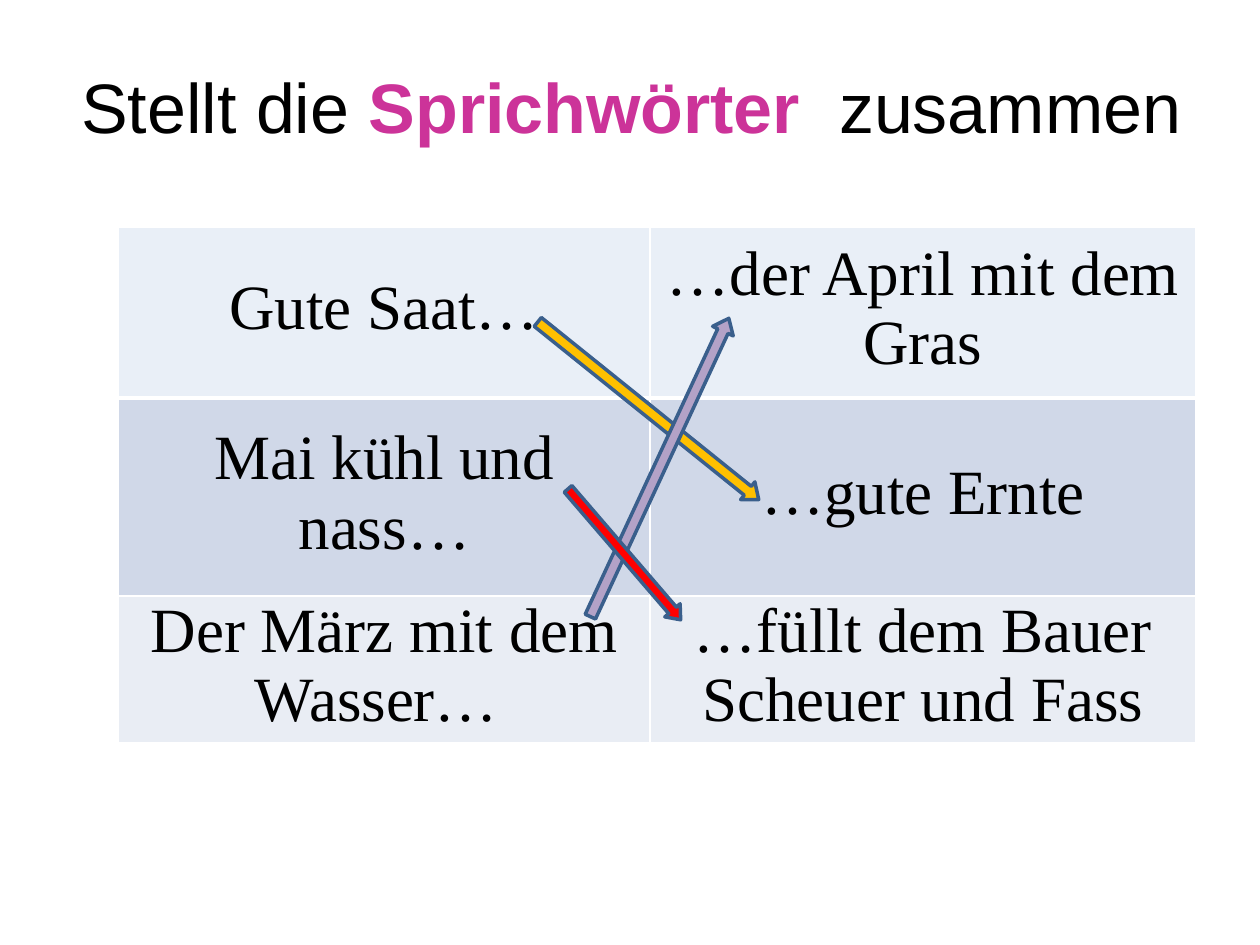
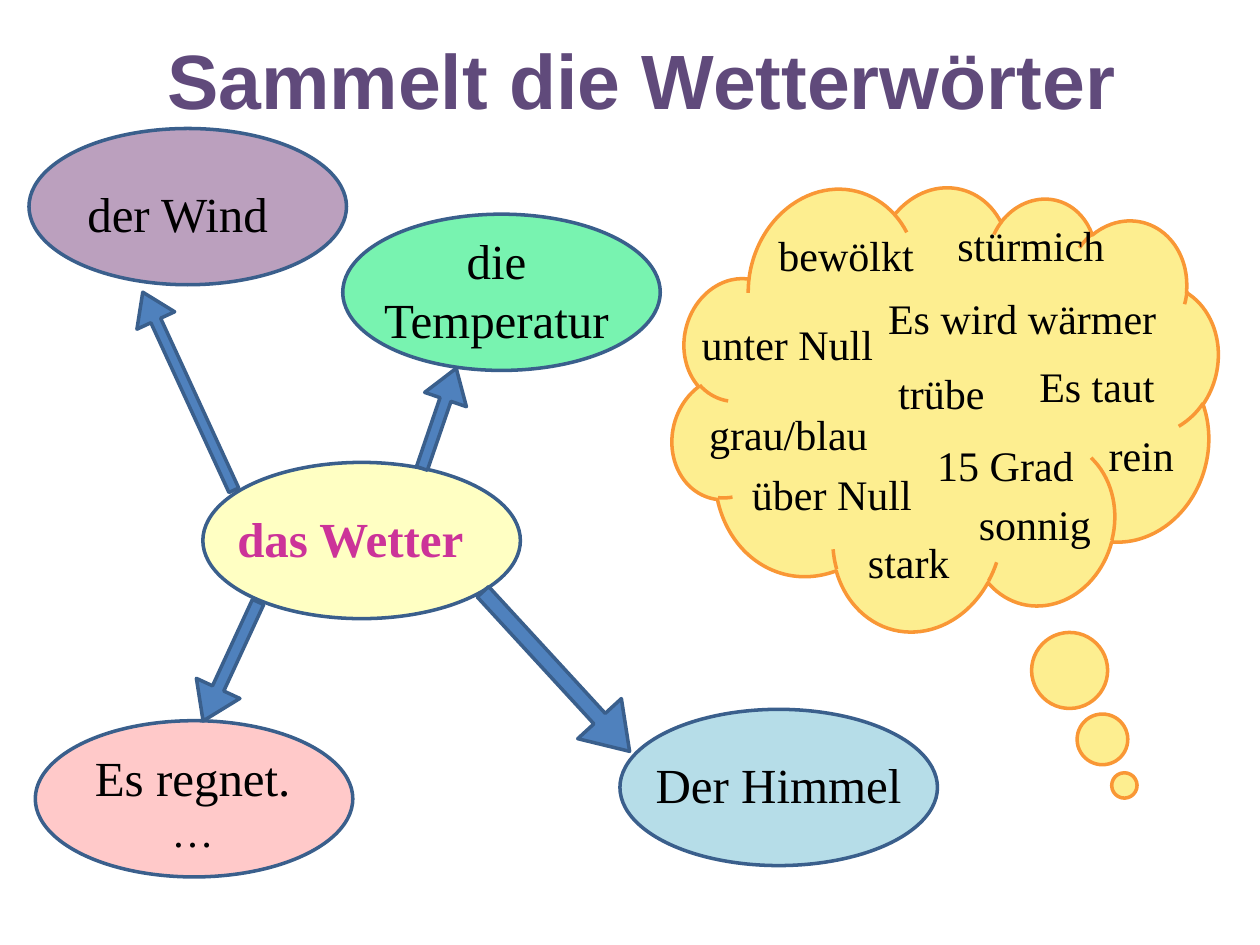
from lxml import etree
from pptx import Presentation
from pptx.dml.color import RGBColor
from pptx.enum import shapes, text
from pptx.oxml.ns import qn
from pptx.util import Inches, Pt

SANS, SERIF = "Arial", "Times New Roman"
BLACK, WHITE, PINK, PURPLE = "000000", "FFFFFF", "CC3399", "604A7B"
OUTLINE, ARROW_BLUE, CLOUD_LINE = "3A5F8C", "4F81BD", "F99735"

# Slide 1
PROVERB_TITLE = [("Stellt die ", {}),
                 ("Sprichwörter", {"color": PINK, "bold": True}),
                 ("  zusammen", {})]
PROVERBS = [("Gute Saat…", "…der April mit dem Gras"),
            ("Mai kühl und nass…", "…gute Ernte"),
            ("Der März mit dem Wasser… ", "…füllt dem Bauer Scheuer und Fass")]
TABLE_PLACE = (0.94, 1.8)
COLUMN_WIDTHS = (4.22, 4.33)
ROW_HEIGHTS = (1.36, 1.57, 1.16)
ROW_FILLS = ("E9EFF7", "D0D8E8", "E9EDF4")
# box, rotation, fill, head length
MATCH_ARROWS = [((4.02, 3.17, 2.25, 0.18), 38.8, "FFC000"),
                ((3.93, 3.62, 2.61, 0.18), 294.9, "B3A2C7"),
                ((4.27, 4.32, 1.37, 0.16), 49.3, "FF0000")]

# Slide 2
WEATHER_TITLE = "Sammelt die Wetterwörter"
CLOUD_BOX = (5.36, 1.41, 4.26, 3.62)
# word, left, top, width
CLOUD_WORDS = [("bewölkt", 6.08, 1.77, 1.73), ("unter Null", 5.47, 2.48, 1.88),
               ("grau/blau", 5.53, 3.19, 1.57), ("stürmich", 7.5, 1.69, 1.69),
               ("über Null", 5.87, 3.67, 1.66), ("rein", 8.7, 3.36, 1.1),
               ("trübe", 7.03, 2.87, 1.1), ("stark", 6.79, 4.21, 0.94),
               ("Es wird wärmer", 6.95, 2.27, 2.54), ("Es taut", 8.15, 2.81, 1.34),
               ("15 Grad", 7.34, 3.44, 1.3), ("sonnig", 7.67, 3.91, 1.27)]
ELLIPSE_SIZE = (2.52, 1.24)
# ellipse corner, fill, opacity in percent, label box, label paragraphs
TOPICS = [
    ((0.23, 1.02), "7B4581", 51, (0.31, 1.41, 2.2, 0.57), [[("der Wind", {})]]),
    ((1.61, 3.67), "FFFF99", 59, (1.77, 3.99, 2.02, 0.57),
     [[("das Wetter", {"color": PINK, "bold": True})]]),
    ((4.92, 5.63), "93CDDD", 67, (5.08, 5.94, 2.2, 0.57), [[("Der Himmel", {})]]),
    ((2.72, 1.7), "00EA6A", 53, (2.8, 1.78, 2.28, 1.04), [[("die Temperatur", {})]]),
    ((0.28, 5.72), "FF9999", 52, (0.43, 5.88, 2.2, 0.98),
     [[("Es regnet.", {})], [("…", {"size": 24})]]),
]
TOPIC_ARROWS = [((1.33, 2.24, 0.33, 1.73), 335.3), ((1.64, 4.73, 0.38, 1.04), 204.8),
                ((3.31, 2.9, 0.35, 0.84), 18.9), ((4.18, 4.47, 0.47, 1.72), 137.4)]


def rgb(color):
    return RGBColor.from_string(color)


def inches(values):
    return [Inches(value) for value in values]


def write(frame, paragraphs, name, size, color=BLACK, bold=False, centred=True):
    """Fill a text frame; each paragraph is a list of (text, changed formats)."""
    base = {"name": name, "size": size, "color": color, "bold": bold}
    for index, runs in enumerate(paragraphs):
        paragraph = frame.add_paragraph() if index else frame.paragraphs[0]
        paragraph.alignment = text.PP_ALIGN.CENTER if centred else text.PP_ALIGN.LEFT
        for words, changes in runs:
            run = paragraph.add_run()
            run.text = words
            style = {**base, **changes}
            run.font.color.rgb = rgb(style.pop("color"))
            style["size"] = Pt(style["size"])
            for key, value in style.items():
                setattr(run.font, key, value)


def add_text(parent, box, paragraphs, name, size, grow=True,
             anchor=text.MSO_ANCHOR.TOP, **formats):
    frame = parent.add_textbox(*inches(box)).text_frame
    frame.word_wrap = True
    frame.auto_size = (text.MSO_AUTO_SIZE.SHAPE_TO_FIT_TEXT if grow
                       else text.MSO_AUTO_SIZE.NONE)
    frame.vertical_anchor = anchor
    write(frame, paragraphs, name, size, **formats)


def add_outlined(parent, kind, box, fill, line=OUTLINE, opacity=100,
                 rotation=0, adjustments=()):
    shape = parent.add_shape(kind, *inches(box))
    shape.shadow.inherit = False
    shape.rotation = rotation
    for index, value in enumerate(adjustments):
        shape.adjustments[index] = value
    shape.fill.solid()
    shape.fill.fore_color.rgb = rgb(fill)
    if opacity < 100:
        color = shape.element.spPr.find(qn("a:solidFill")).find(qn("a:srgbClr"))
        etree.SubElement(color, qn("a:alpha")).set("val", str(opacity * 1000))
    shape.line.color.rgb = rgb(line)
    shape.line.width = Pt(2)


def set_borders(cell, **widths):
    """Give a cell white borders, in points, keyed L, R, T and B."""
    properties = cell._tc.get_or_add_tcPr()
    for side in "LRTB":
        border = etree.SubElement(properties, qn(f"a:ln{side}"),
                                  w=str(Pt(widths.get(side, 1))))
        solid = etree.SubElement(border, qn("a:solidFill"))
        etree.SubElement(solid, qn("a:srgbClr"), val=WHITE)


def add_proverb_table(slide):
    size = (sum(COLUMN_WIDTHS), sum(ROW_HEIGHTS))
    table = slide.shapes.add_table(len(PROVERBS), len(COLUMN_WIDTHS),
                                   *inches(TABLE_PLACE + size)).table
    table.first_row = table.horz_banding = False
    for column, width in zip(table.columns, COLUMN_WIDTHS):
        column.width = Inches(width)
    for row, height in zip(table.rows, ROW_HEIGHTS):
        row.height = Inches(height)
    heavy_lines = ({"B": 3}, {"T": 3}, {})
    margins = {"margin_left": 0.13, "margin_right": 0.13,
               "margin_top": 0, "margin_bottom": 0.06}
    for row, halves in enumerate(PROVERBS):
        for column, half in enumerate(halves):
            cell = table.cell(row, column)
            set_borders(cell, **heavy_lines[row])
            cell.fill.solid()
            cell.fill.fore_color.rgb = rgb(ROW_FILLS[row])
            cell.vertical_anchor = text.MSO_ANCHOR.MIDDLE
            for key, value in margins.items():
                setattr(cell, key, Inches(value))
            write(cell.text_frame, [[(half, {})]], SERIF, 36)


def build_proverbs(slide):
    add_text(slide.shapes, (0.51, 0.21, 9, 1.25), [PROVERB_TITLE], SANS, 40,
             grow=False, anchor=text.MSO_ANCHOR.MIDDLE)
    add_proverb_table(slide)
    for box, rotation, fill in MATCH_ARROWS:
        add_outlined(slide.shapes, shapes.MSO_SHAPE.RIGHT_ARROW, box, fill,
                     rotation=rotation, adjustments=(0.5, 0.62))


def build_weather(slide):
    add_outlined(slide.shapes, shapes.MSO_SHAPE.CLOUD_CALLOUT, CLOUD_BOX, "FCD904",
                 CLOUD_LINE, opacity=44, rotation=14.2, adjustments=(0.5, 0.71))
    for word, left, top, width in CLOUD_WORDS:
        add_text(slide.shapes, (left, top, width, 0.5), [[(word, {})]], SERIF, 24,
                 centred=False)
    for corner, fill, opacity, label_box, label in TOPICS:
        group = slide.shapes.add_group_shape().shapes
        add_outlined(group, shapes.MSO_SHAPE.OVAL, corner + ELLIPSE_SIZE, fill,
                     opacity=opacity)
        add_text(group, label_box, label, SERIF, 28)
    for box, rotation in TOPIC_ARROWS:
        add_outlined(slide.shapes, shapes.MSO_SHAPE.UP_ARROW, box, ARROW_BLUE,
                     rotation=rotation, adjustments=(0.26, 0.75))
    add_text(slide.shapes, (0.51, 0.21, 9.17, 0.84), [[(WEATHER_TITLE, {})]], SANS, 44,
             color=PURPLE, bold=True)


def main():
    presentation = Presentation()
    presentation.slide_width, presentation.slide_height = Inches(10), Inches(7.5)
    for build in (build_proverbs, build_weather):
        build(presentation.slides.add_slide(presentation.slide_layouts[6]))
    presentation.save("out.pptx")


if __name__ == "__main__":
    main()
